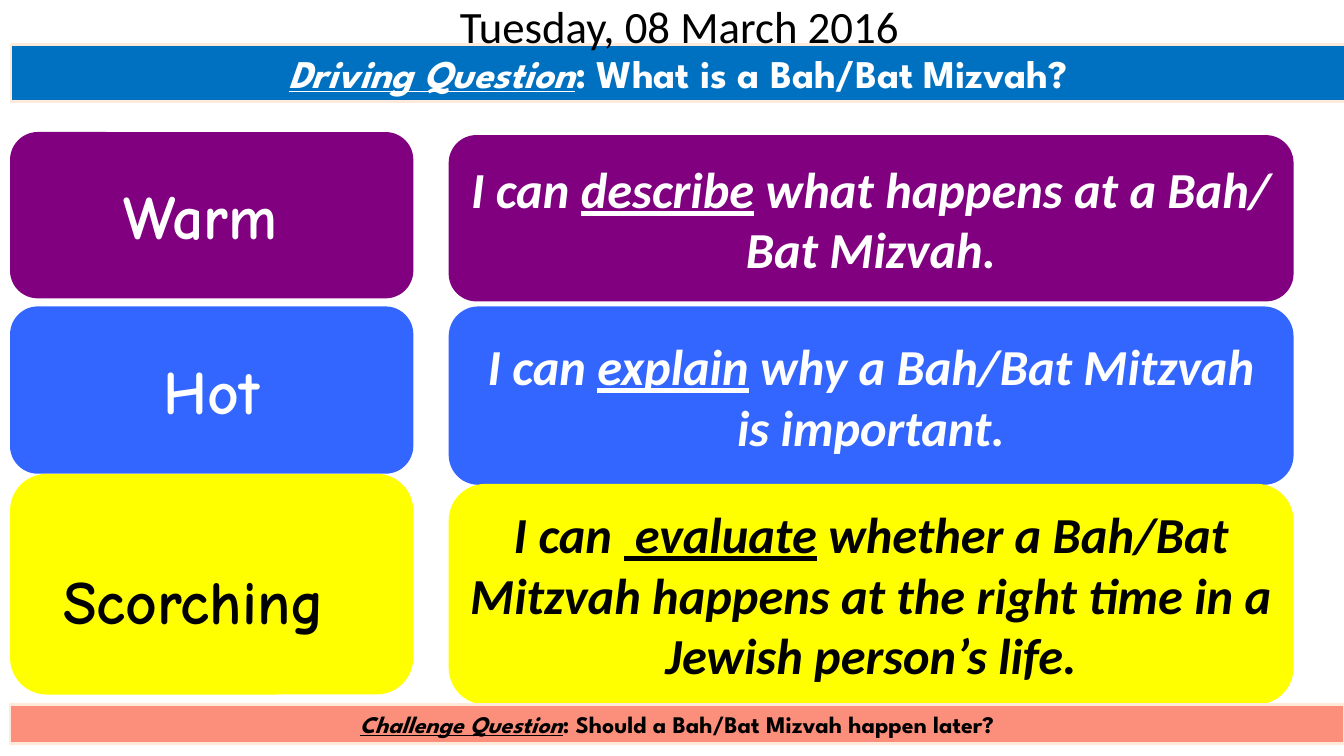
from dataclasses import dataclass

from pptx import Presentation
from pptx.dml.color import RGBColor
from pptx.enum.shapes import MSO_SHAPE
from pptx.enum.text import MSO_ANCHOR, MSO_AUTO_SIZE, PP_ALIGN
from pptx.util import Inches, Pt


@dataclass(frozen=True)
class Theme:
    """Colours, fonts and type sizes of the slide."""
    white: str = "FFFFFF"
    black: str = "000000"
    purple: str = "800080"
    blue: str = "3366FF"
    yellow: str = "FFFF00"
    navy: str = "0070C0"
    coral: str = "FC8E7C"
    edge: str = "FDEADA"
    body: str = "Calibri"
    hand: str = "Comic Neue"
    head: str = "League Spartan"
    date: int = 32
    drive: int = 28
    dare: int = 17
    level: int = 44
    gap: int = 72
    goal: int = 36


THEME = Theme()


def style(run, face, size, ink, bold=True, slant=False, under=False):
    """Format one run."""
    font = run.font
    font.name, font.size = face, Pt(size)
    font.color.rgb = RGBColor.from_string(ink)
    font.bold, font.italic, font.underline = bold, slant, under


def panel(slide, kind, box, fill):
    """Add a flat filled shape and return it with its centred paragraph."""
    shape = slide.shapes.add_shape(kind, *map(Inches, box))
    shape.shadow.inherit = False
    shape.fill.solid()
    shape.fill.fore_color.rgb = RGBColor.from_string(fill)
    shape.line.fill.background()
    frame = shape.text_frame
    frame.word_wrap = True
    frame.vertical_anchor = MSO_ANCHOR.MIDDLE
    para = frame.paragraphs[0]
    para.alignment = PP_ALIGN.CENTER
    return shape, para


def add_run(para, text):
    """Append a run of text."""
    run = para.add_run()
    run.text = text
    return run


def banner(slide, box, fill, ink, size, label, text):
    """Draw a question bar with an underlined label."""
    shape, para = panel(slide, MSO_SHAPE.RECTANGLE, box, fill)
    shape.line.color.rgb = RGBColor.from_string(THEME.edge)
    shape.line.width = Pt(2)
    shape.text_frame.vertical_anchor = MSO_ANCHOR.TOP
    shape.text_frame.auto_size = MSO_AUTO_SIZE.SHAPE_TO_FIT_TEXT
    style(add_run(para, label), THEME.head, size, ink, slant=True, under=True)
    style(add_run(para, text), THEME.head, size, ink)


def level(slide, box, fill, ink, parts):
    """Draw the name of a challenge level."""
    para = panel(slide, MSO_SHAPE.ROUNDED_RECTANGLE, box, fill)[1]
    for text, size in parts:
        style(add_run(para, text), THEME.hand, size, ink)


def goal(slide, box, fill, ink, verb, rest):
    """Draw a goal whose verb is underlined."""
    para = panel(slide, MSO_SHAPE.ROUNDED_RECTANGLE, box, fill)[1]
    for text, under in (("I can ", False), (verb, True), (rest, False)):
        style(add_run(para, text), THEME.body, THEME.goal, ink,
              slant=True, under=under)


def heading(slide, box):
    """Place the date in the title, in front of the bars."""
    title = slide.shapes.title
    title.left, title.top, title.width, title.height = map(Inches, box)
    frame = title.text_frame
    frame.text = "Tuesday, 08 March 2016"
    frame.word_wrap = True
    frame.auto_size = MSO_AUTO_SIZE.NONE
    frame.vertical_anchor = MSO_ANCHOR.MIDDLE
    para = frame.paragraphs[0]
    para.alignment = PP_ALIGN.LEFT
    style(para.runs[0], THEME.body, THEME.date, THEME.black, bold=False)
    title.element.getparent().append(title.element)


def ladder(slide, left, right):
    """Draw three levels beside their goals, in columns of (left, width)."""
    rows = [
        ((1.31, 1.65), (1.34, 1.65), THEME.purple, THEME.white,
         [("Warm ", THEME.level)],
         "describe", " what happens at a Bah/ Bat Mizvah."),
        ((3.04, 1.66), (3.04, 1.77), THEME.blue, THEME.white,
         [("Hot", THEME.level)],
         "explain", " why a Bah/Bat Mitzvah is important."),
        ((4.7, 2.19), (4.8, 2.19), THEME.yellow, THEME.black,
         [("Scorching", THEME.level), (" ", THEME.gap)],
         " evaluate", " whether a Bah/Bat Mitzvah happens at the right "
         "time in a Jewish person’s life."),
    ]
    for near, far, fill, ink, parts, verb, rest in rows:
        goal(slide, (right[0], far[0], right[1], far[1]),
             fill, ink, verb, rest)
        level(slide, (left[0], near[0], left[1], near[1]), fill, ink, parts)


def main():
    """Build and save the slide."""
    deck = Presentation()
    deck.slide_width, deck.slide_height = Inches(13.33), Inches(7.5)
    slide = deck.slides.add_slide(deck.slide_layouts[5])
    ladder(slide, (0.1, 4), (4.45, 8.38))
    banner(slide, (0.1, 6.99, 13.23, 0.39), THEME.coral, THEME.black,
           THEME.dare, "Challenge Question",
           ": Should a Bah/Bat Mizvah happen later?")
    banner(slide, (0.11, 0.44, 13.23, 0.57), THEME.navy, THEME.white,
           THEME.drive, "Driving Question", ": What is a Bah/Bat Mizvah?")
    heading(slide, (4.46, 0.05, 7.95, 0.4))
    deck.save("out.pptx")


if __name__ == "__main__":
    main()
